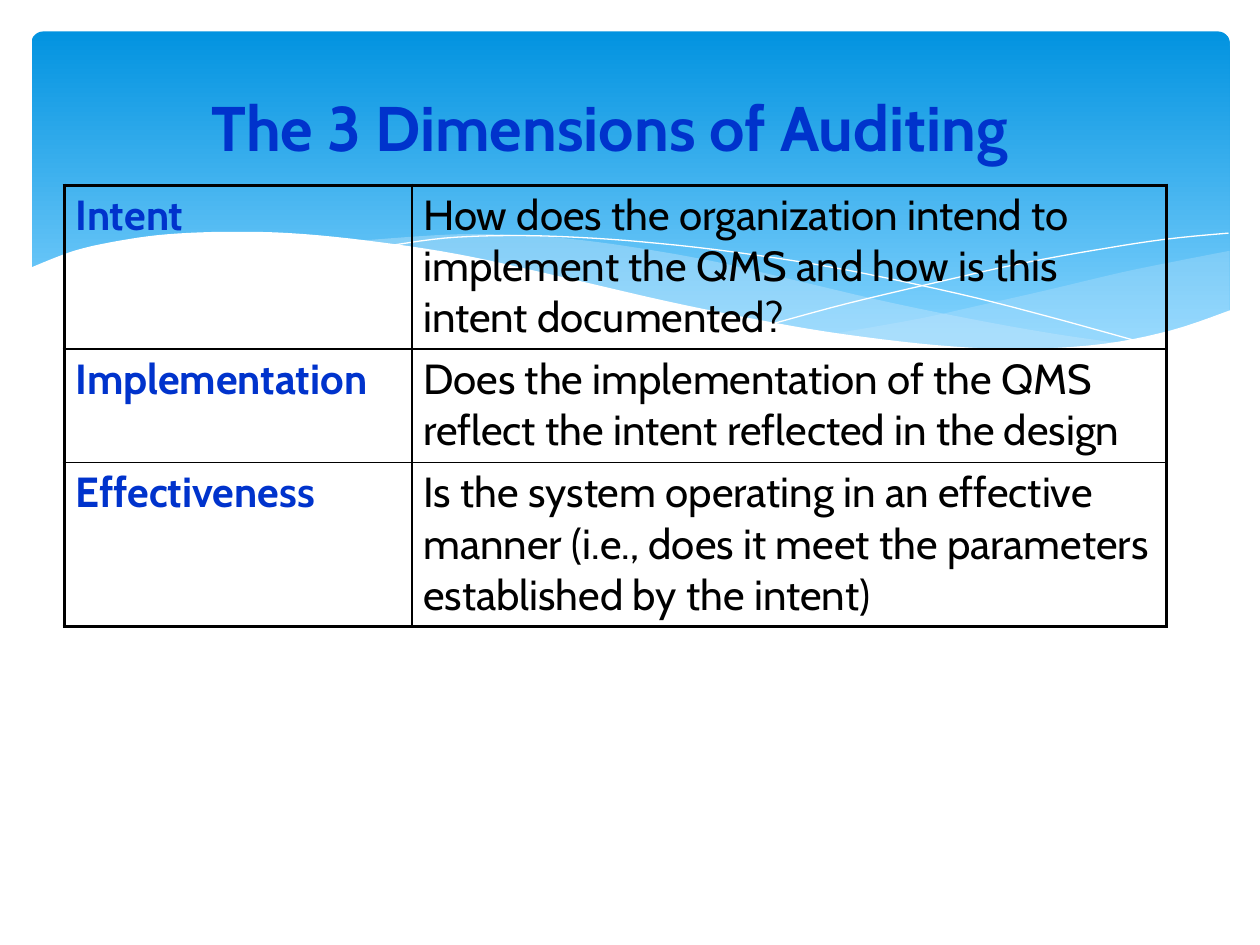
import pptx
import pptx.util
import pptx.dml.color
import pptx.enum.shapes
import pptx.enum.text
import pptx.oxml
import pptx.oxml.ns
from pptx.util import Inches

COLORS = {
    "sky_top": "0293E0",
    "sky_bottom": "83D3FE",
    "wave": "C6E7FC",
    "white": "FFFFFF",
    "heading": "0033CC",
    "black": "000000",
}
FONT = "Cabin"
OUTER_BORDER, INNER_BORDER = 2.25, 1

# Each wave edge is a list of key points, in inches, joined by a smooth curve.
RIGHT_WAVE_TOP = [(9.76, 1.99), (9.35, 2.07), (8.91, 2.16), (8.32, 2.3),
                  (7.79, 2.42), (7.29, 2.53), (6.61, 2.65)]
RIGHT_WAVE_BOTTOM = [(6.61, 2.65), (7.05, 2.71), (7.57, 2.76), (8.03, 2.78),
                     (8.54, 2.76), (8.97, 2.7), (9.35, 2.61), (9.76, 2.47)]
MIDDLE_WAVE_TOP = [(8.93, 2.73), (8.37, 2.65), (7.75, 2.54), (7.06, 2.4),
                   (6.29, 2.22), (5.69, 2.08), (5.14, 1.98), (4.65, 1.91),
                   (4.2, 1.87), (3.61, 1.86), (2.86, 1.91)]
MIDDLE_WAVE_BOTTOM = [(2.86, 1.91), (3.42, 1.99), (4.04, 2.11), (4.91, 2.32),
                      (5.66, 2.48), (6.34, 2.61), (6.95, 2.7), (7.48, 2.76),
                      (7.96, 2.78), (8.48, 2.77), (8.93, 2.73)]
FALLING_LINE = [(3.09, 1.95), (3.53, 1.89), (4.01, 1.87), (4.5, 1.88),
                (5.1, 1.92), (5.82, 2), (6.65, 2.13), (7.6, 2.33),
                (8.31, 2.51), (9.07, 2.72)]
RISING_LINE = [(6.13, 2.57), (6.72, 2.41), (7.48, 2.23), (8.06, 2.1),
               (8.66, 1.99), (9.24, 1.9), (9.75, 1.85)]
WHITE_WAVE_TOP = [(9.77, 2.46), (9.3, 2.62), (8.75, 2.73), (8.09, 2.77),
                  (7.44, 2.74), (6.68, 2.65), (6.03, 2.54), (5.29, 2.39),
                  (4.47, 2.2), (3.65, 2.02), (2.92, 1.91), (2.3, 1.85),
                  (1.77, 1.84), (1.32, 1.86), (0.95, 1.91), (0.59, 1.99),
                  (0.23, 2.13)]
WHITE_WAVE_BASE = [(0.23, 3.29), (9.77, 3.29)]

DIMENSIONS = [
    ("Intent", "How does the organization intend to implement the QMS "
               "and how is this intent documented?"),
    ("Implementation", "Does the implementation of the QMS reflect the intent "
                       "reflected in the design"),
    ("Effectiveness", "Is the system operating in an effective manner (i.e., "
                      "does it meet the parameters established by the intent)"),
]
COLUMN_WIDTHS = [2.76, 5.99]
ROW_HEIGHTS = [1.3, 0.9, 1.3]


def rgb(name):
    return pptx.dml.color.RGBColor.from_string(COLORS[name])


def smooth(points, steps=5):
    """Return points on the Catmull-Rom curve through the key points."""
    padded = [points[0], *points, points[-1]]
    curve = []
    for a, b, c, d in zip(padded, padded[1:], padded[2:], padded[3:]):
        for t in (step / steps for step in range(steps)):
            curve.append(tuple(
                0.5 * (2 * q + (r - p) * t + (2 * p - 5 * q + 4 * r - s) * t**2
                       + (3 * q - p - 3 * r + s) * t**3)
                for p, q, r, s in zip(a, b, c, d)))
    return curve + [points[-1]]


def add_outline(slide, points, closed):
    corners = [(Inches(x), Inches(y)) for x, y in points]
    builder = slide.shapes.build_freeform(*corners[0])
    builder.add_line_segments(corners[1:], close=closed)
    shape = builder.convert_to_shape()
    shape.shadow.inherit = False
    return shape


def add_wave(slide, points, color, opacity=100):
    shape = add_outline(slide, points, True)
    shape.line.fill.background()
    shape.fill.solid()
    shape.fill.fore_color.rgb = rgb(color)
    if opacity < 100:
        color_element = shape.fill._xPr.find(".//" + pptx.oxml.ns.qn("a:srgbClr"))
        alpha = pptx.oxml.parse_xml(
            f'<a:alpha {pptx.oxml.ns.nsdecls("a")} val="{opacity * 1000}"/>')
        color_element.append(alpha)


def add_curve(slide, points):
    shape = add_outline(slide, smooth(points), False)
    shape.fill.background()
    shape.line.color.rgb = rgb("white")
    shape.line.width = pptx.util.Pt(0)


def add_sky(slide):
    sky = slide.shapes.add_shape(
        pptx.enum.shapes.MSO_SHAPE.ROUNDED_RECTANGLE,
        Inches(0.25), Inches(0.25), Inches(9.51), Inches(2.7))
    sky.adjustments[0] = 0.034
    sky.shadow.inherit = False
    sky.line.fill.background()
    sky.fill.gradient()
    sky.fill.gradient_angle = 270
    stops = [(0, "sky_top"), (0.9, "sky_bottom")]
    for stop, (position, color) in zip(sky.fill.gradient_stops, stops):
        stop.position = position
        stop.color.rgb = rgb(color)


def write(text_frame, text, size, color, bold):
    paragraph = text_frame.paragraphs[0]
    paragraph.alignment = pptx.enum.text.PP_ALIGN.LEFT
    run = paragraph.add_run()
    run.text = text
    font_format = {"name": FONT, "size": pptx.util.Pt(size), "bold": bold}
    for attribute, value in font_format.items():
        setattr(run.font, attribute, value)
    run.font.color.rgb = rgb(color)


def add_title(slide, text):
    box = slide.shapes.add_textbox(
        Inches(1.58), Inches(0.42), Inches(6.92), Inches(1.17))
    box.text_frame.word_wrap = True
    box.text_frame.vertical_anchor = pptx.enum.text.MSO_ANCHOR.MIDDLE
    write(box.text_frame, text, 36, "heading", True)


def set_borders(cell, widths):
    """Draw black borders; widths maps the sides L, R, T, B to points."""
    properties = cell._tc.get_or_add_tcPr()
    for index, side in enumerate("LRTB"):
        properties.insert(index, pptx.oxml.parse_xml(
            f'<a:ln{side} {pptx.oxml.ns.nsdecls("a")} '
            f'w="{pptx.util.Pt(widths[side])}"><a:solidFill>'
            f'<a:srgbClr val="{COLORS["black"]}"/></a:solidFill></a:ln{side}>'))


def add_dimension_table(slide):
    last_row, last_column = len(ROW_HEIGHTS) - 1, len(COLUMN_WIDTHS) - 1
    table = slide.shapes.add_table(
        len(ROW_HEIGHTS), len(COLUMN_WIDTHS), Inches(0.51), Inches(1.47),
        Inches(sum(COLUMN_WIDTHS)), Inches(sum(ROW_HEIGHTS))).table
    table.first_row = table.horz_banding = False
    for column, width in zip(table.columns, COLUMN_WIDTHS):
        column.width = Inches(width)
    for row, height in zip(table.rows, ROW_HEIGHTS):
        row.height = Inches(height)
    margins = {"margin_left": 0.09, "margin_right": 0.09,
               "margin_top": 0.04, "margin_bottom": 0.04}
    for i, texts in enumerate(DIMENSIONS):
        for j, text in enumerate(texts):
            cell = table.cell(i, j)
            for attribute, value in margins.items():
                setattr(cell, attribute, Inches(value))
            cell.fill.background()
            outer = {"L": j == 0, "R": j == last_column,
                     "T": i == 0, "B": i == last_row}
            set_borders(cell, {side: OUTER_BORDER if edge else INNER_BORDER
                               for side, edge in outer.items()})
            is_name = j == 0
            write(cell.text_frame, text, 24,
                  "heading" if is_name else "black", is_name)


def main():
    presentation = pptx.Presentation()
    presentation.slide_width, presentation.slide_height = Inches(10), Inches(7.5)
    slide = presentation.slides.add_slide(presentation.slide_layouts[6])
    add_sky(slide)
    add_wave(slide, smooth(RIGHT_WAVE_TOP) + smooth(RIGHT_WAVE_BOTTOM), "wave", 29)
    add_wave(slide, smooth(MIDDLE_WAVE_TOP) + smooth(MIDDLE_WAVE_BOTTOM), "wave", 40)
    add_curve(slide, FALLING_LINE)
    add_curve(slide, RISING_LINE)
    add_wave(slide, smooth(WHITE_WAVE_TOP) + WHITE_WAVE_BASE, "white")
    add_title(slide, "The 3 Dimensions of Auditing")
    add_dimension_table(slide)
    presentation.save("out.pptx")


if __name__ == "__main__":
    main()
